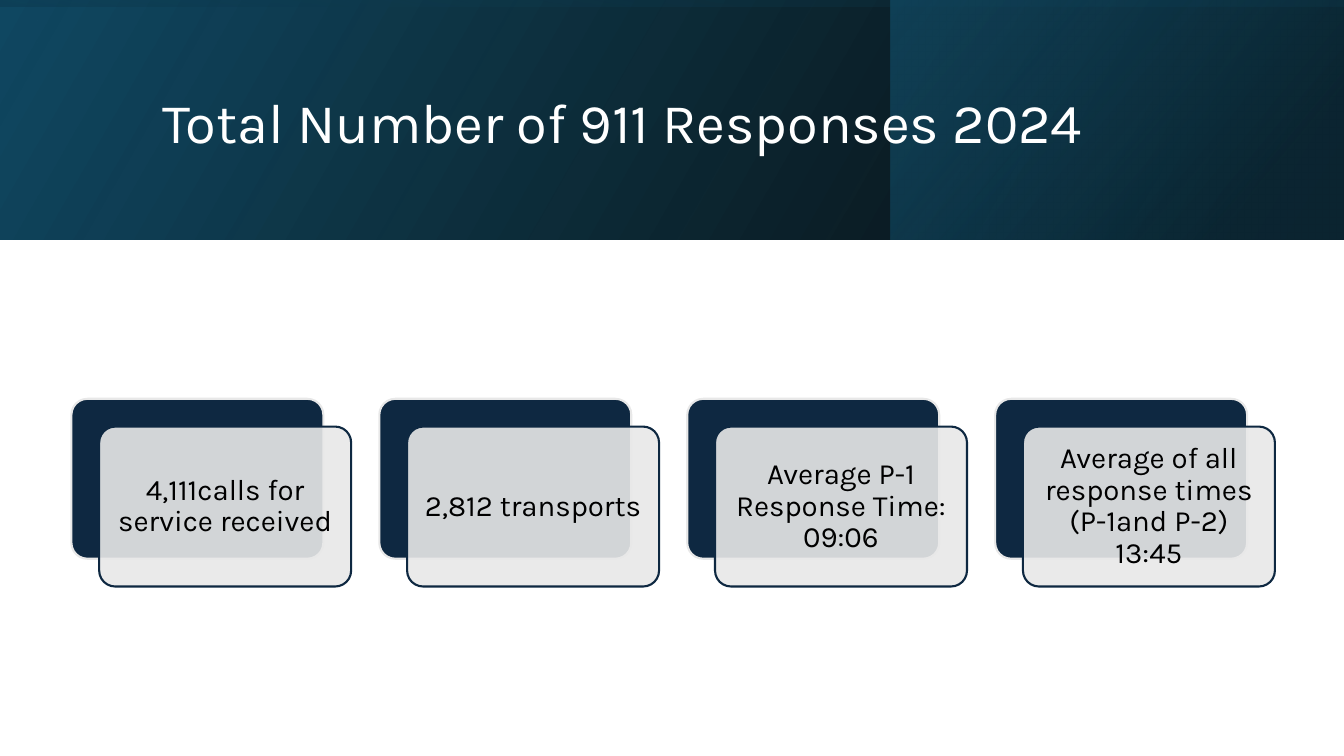
from pptx import Presentation
from pptx.dml.color import RGBColor
from pptx.enum.shapes import MSO_SHAPE
from pptx.enum.text import MSO_ANCHOR, PP_ALIGN
from pptx.oxml.ns import qn
from pptx.util import Cm, Pt
from lxml.etree import SubElement

BLACK = RGBColor(0x00, 0x00, 0x00)
WHITE = RGBColor(0xFF, 0xFF, 0xFF)
NAVY = RGBColor(0x0E, 0x28, 0x41)
PALE_GREY = RGBColor(0xE8, 0xE8, 0xE8)
DEEP_BLUE = RGBColor(0x10, 0x48, 0x62)
DARK_TEAL = RGBColor(0x0B, 0x30, 0x41)
TEAL = RGBColor(0x15, 0x60, 0x82)

SLIDE_WIDTH, SLIDE_HEIGHT = 33.87, 19.05
BANNER_HEIGHT = 6.03
FACTS = [
    "4,111calls for service received",
    "2,812 transports",
    "Average P-1 Response Time: 09:06",
    "Average of all response times (P-1and P-2) 13:45",
]


def write(frame, text, size, color, align=PP_ALIGN.LEFT, inset=0.25):
    frame.word_wrap = True
    frame.vertical_anchor = MSO_ANCHOR.MIDDLE
    frame.margin_left = frame.margin_right = Cm(inset)
    frame.margin_top = frame.margin_bottom = Cm(inset)
    paragraph = frame.paragraphs[0]
    paragraph.alignment = align
    paragraph.line_spacing = 0.9
    run = paragraph.add_run()
    run.text = text
    run.font.name = "Karla"
    run.font.size = Pt(size)
    run.font.color.rgb = color


def set_opacity(fill_colors, percents):
    for color, percent in zip(fill_colors, percents):
        SubElement(color, qn("a:alpha")).set("val", str(percent * 1000))


def add_gradient(slide, left, top, width, height, stops, angle, rotation=0):
    """Add a mirrored rectangle; each stop is (position, colour, opacity %)."""
    panel = slide.shapes.add_shape(
        MSO_SHAPE.RECTANGLE, Cm(left), Cm(top), Cm(width), Cm(height))
    panel.shadow.inherit = False
    panel.line.fill.background()
    panel.rotation = rotation
    panel.element.spPr.find(qn("a:xfrm")).set("flipH", "1")
    panel.fill.gradient()
    panel.fill.gradient_angle = angle
    for stop, (position, color, _) in zip(panel.fill.gradient_stops, stops):
        stop.position = position
        stop.color.rgb = color
    set_opacity(panel.element.spPr.iter(qn("a:srgbClr")),
                [opacity for _, _, opacity in stops])


def add_banner(slide, width, height, title_text):
    accent_width = 11.4
    add_gradient(slide, 0, 0, width, height,
                 [(0, BLACK, 96), (1, DEEP_BLUE, 100)], 30)
    add_gradient(slide, 22.45, 0, accent_width, height,
                 [(0.19, DARK_TEAL, 68), (1, TEAL, 48)], 40)
    # Turned a quarter, this panel covers the whole banner.
    shift = (width - height) / 2
    add_gradient(slide, shift, -shift, height, width,
                 [(0.23, DEEP_BLUE, 16), (0.99, BLACK, 45)], 10, rotation=270)

    title = slide.shapes.title
    title.left, title.top = Cm(3.84), Cm(0.97)
    title.width, title.height = Cm(27), Cm(4.37)
    write(title.text_frame, title_text, 40, WHITE)
    title.element.getparent().append(title.element)  # in front of the panels


def add_card(slide, left, top, width, height, fill, line):
    card = slide.shapes.add_shape(
        MSO_SHAPE.ROUNDED_RECTANGLE, Cm(left), Cm(top), Cm(width), Cm(height))
    card.adjustments[0] = 0.1
    card.shadow.inherit = False
    card.fill.solid()
    card.fill.fore_color.rgb = fill
    card.line.color.rgb = line
    card.line.width = Pt(1.5)
    return card


def add_facts(slide, left, top, facts):
    width, height, offset, pitch = 6.35, 4.03, 0.7, 7.76
    for index, fact in enumerate(facts):
        x = left + index * pitch
        add_card(slide, x, top, width, height, NAVY, PALE_GREY)
        front = add_card(slide, x + offset, top + offset, width, height,
                         PALE_GREY, NAVY)
        fill = front.element.spPr.find(qn("a:solidFill"))
        set_opacity(fill.iter(qn("a:srgbClr")), [90])
        write(front.text_frame, fact, 21, BLACK, PP_ALIGN.CENTER, inset=0.3)


def main():
    deck = Presentation()
    deck.slide_width, deck.slide_height = Cm(SLIDE_WIDTH), Cm(SLIDE_HEIGHT)
    slide = deck.slides.add_slide(deck.slide_layouts[5])
    add_banner(slide, SLIDE_WIDTH, BANNER_HEIGHT,
               "Total Number of 911 Responses 2024")
    add_facts(slide, 1.8, 10.05, FACTS)
    deck.save("out.pptx")


if __name__ == "__main__":
    main()
